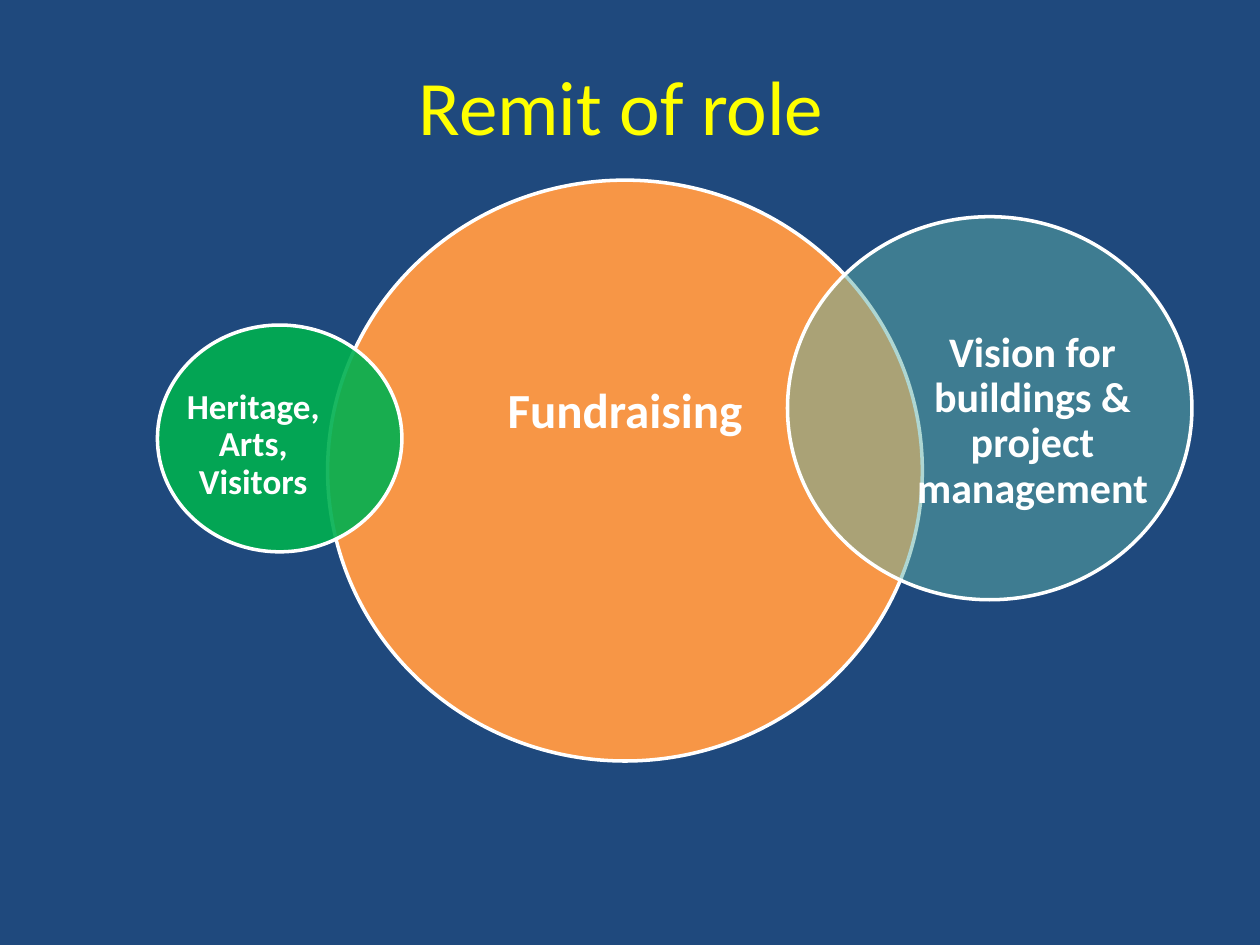
"""Build a slide of overlapping circles that shows the remit of a role."""
from dataclasses import dataclass

import lxml.etree
import pptx
import pptx.dml.color
import pptx.enum.shapes
import pptx.enum.text
import pptx.oxml.ns
import pptx.util

Inches = pptx.util.Inches


@dataclass(frozen=True)
class Theme:
    font: str = "Calibri"
    background: str = "1F497D"
    title: str = "FFFF00"
    light: str = "FFFFFF"
    fundraising: str = "F79646"
    vision: str = "5EAFA6"
    heritage: str = "00B050"
    title_size: int = 44
    large_size: int = 28
    medium_size: int = 24
    small_size: int = 20
    outline: int = 2


THEME = Theme()


def rgb(value):
    return pptx.dml.color.RGBColor.from_string(value)


def place(shape, box):
    shape.left, shape.top, shape.width, shape.height = map(Inches, box)


def write_text(shape, text, *, size, color=THEME.light, bold=False, spacing=None, margin=None):
    frame = shape.text_frame
    frame.word_wrap = True
    frame.auto_size = pptx.enum.text.MSO_AUTO_SIZE.NONE
    frame.vertical_anchor = pptx.enum.text.MSO_ANCHOR.MIDDLE
    if margin is not None:
        frame.margin_left = frame.margin_right = Inches(margin)
        frame.margin_top = frame.margin_bottom = Inches(margin)
    paragraph = frame.paragraphs[0]
    paragraph.alignment = pptx.enum.text.PP_ALIGN.CENTER
    paragraph.line_spacing = spacing
    run = paragraph.add_run()
    run.text = text
    run.font.name = THEME.font
    run.font.size = pptx.util.Pt(size)
    run.font.bold = bold
    run.font.color.rgb = rgb(color)


def add_circle(diagram, box, color, opacity=100):
    circle = diagram.shapes.add_shape(pptx.enum.shapes.MSO_SHAPE.OVAL, *map(Inches, box))
    circle.shadow.inherit = False
    circle.fill.solid()
    circle.fill.fore_color.rgb = rgb(color)
    circle.line.color.rgb = rgb(THEME.light)
    circle.line.width = pptx.util.Pt(THEME.outline)
    if opacity < 100:
        fill_color = circle.fill._xPr.find(pptx.oxml.ns.qn("a:solidFill"))[0]
        alpha = lxml.etree.SubElement(fill_color, pptx.oxml.ns.qn("a:alpha"))
        alpha.set("val", str(opacity * 1000))


def add_label(diagram, box, text, size):
    label = diagram.shapes.add_textbox(*map(Inches, box))
    write_text(label, text, size=size, bold=True, spacing=0.9, margin=0)


def main():
    presentation = pptx.Presentation()
    presentation.slide_width, presentation.slide_height = Inches(10), Inches(7.5)
    slide = presentation.slides.add_slide(presentation.slide_layouts[5])
    slide.background.fill.solid()
    slide.background.fill.fore_color.rgb = rgb(THEME.background)

    place(slide.shapes.title, (0.43, 0.21, 9, 1.25))
    write_text(slide.shapes.title, "Remit of role", size=THEME.title_size, color=THEME.title)

    areas = [
        ("Fundraising", THEME.large_size, THEME.fundraising, 100,
         (2.6, 1.43, 4.72, 4.61), (3.23, 2.24, 3.46, 2.07)),
        ("Vision for buildings & project management", THEME.medium_size, THEME.vision, 50,
         (6.25, 1.72, 3.21, 3.04), (7.23, 2.51, 1.93, 1.67)),
        ("Heritage, Arts, Visitors", THEME.small_size, THEME.heritage, 90,
         (1.25, 2.58, 1.94, 1.8), (1.43, 3.04, 1.16, 0.99)),
    ]
    diagram = slide.shapes.add_group_shape()
    for text, size, color, opacity, circle_box, label_box in areas:
        add_circle(diagram, circle_box, color, opacity)
        add_label(diagram, label_box, text, size)

    presentation.save("out.pptx")


if __name__ == "__main__":
    main()
